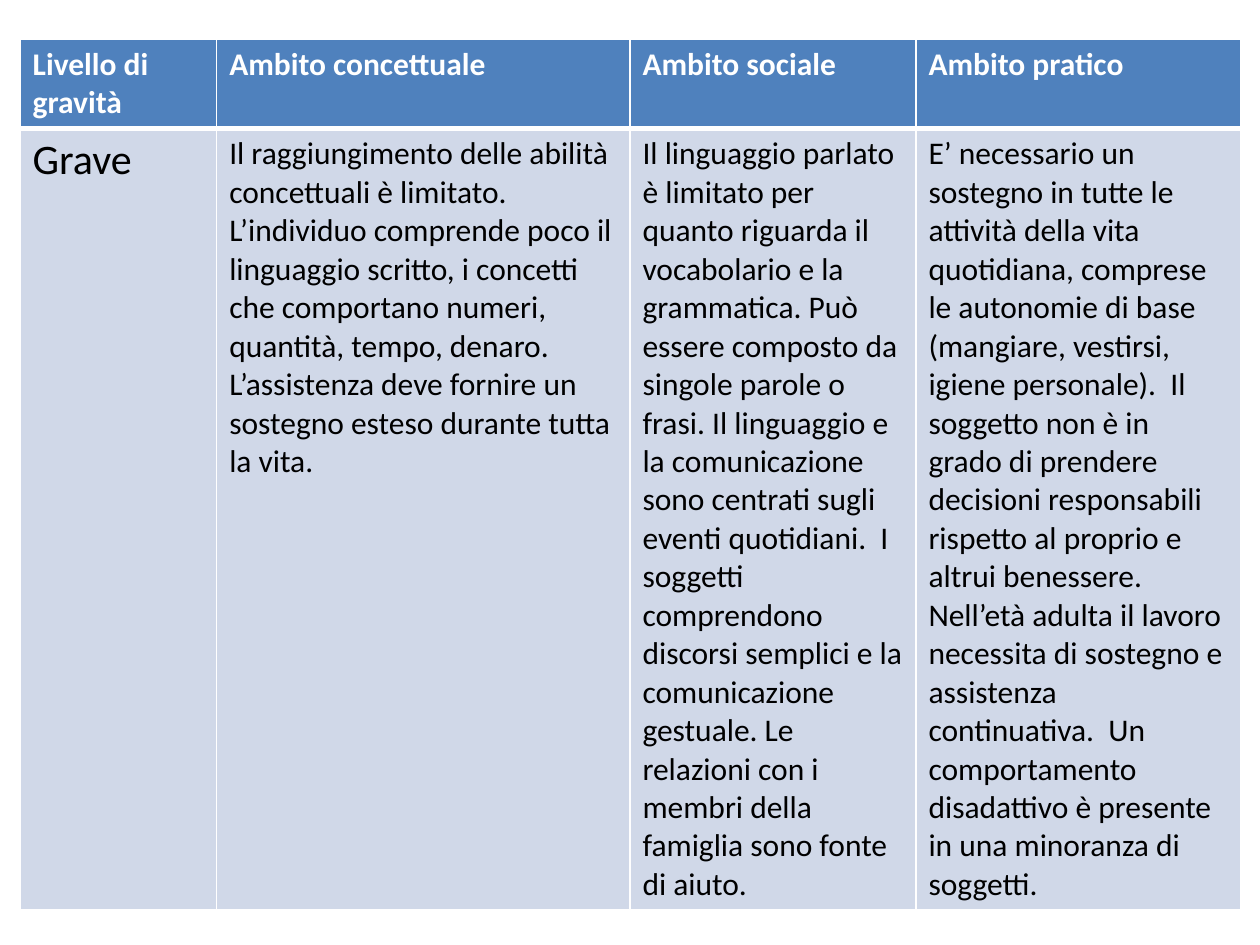
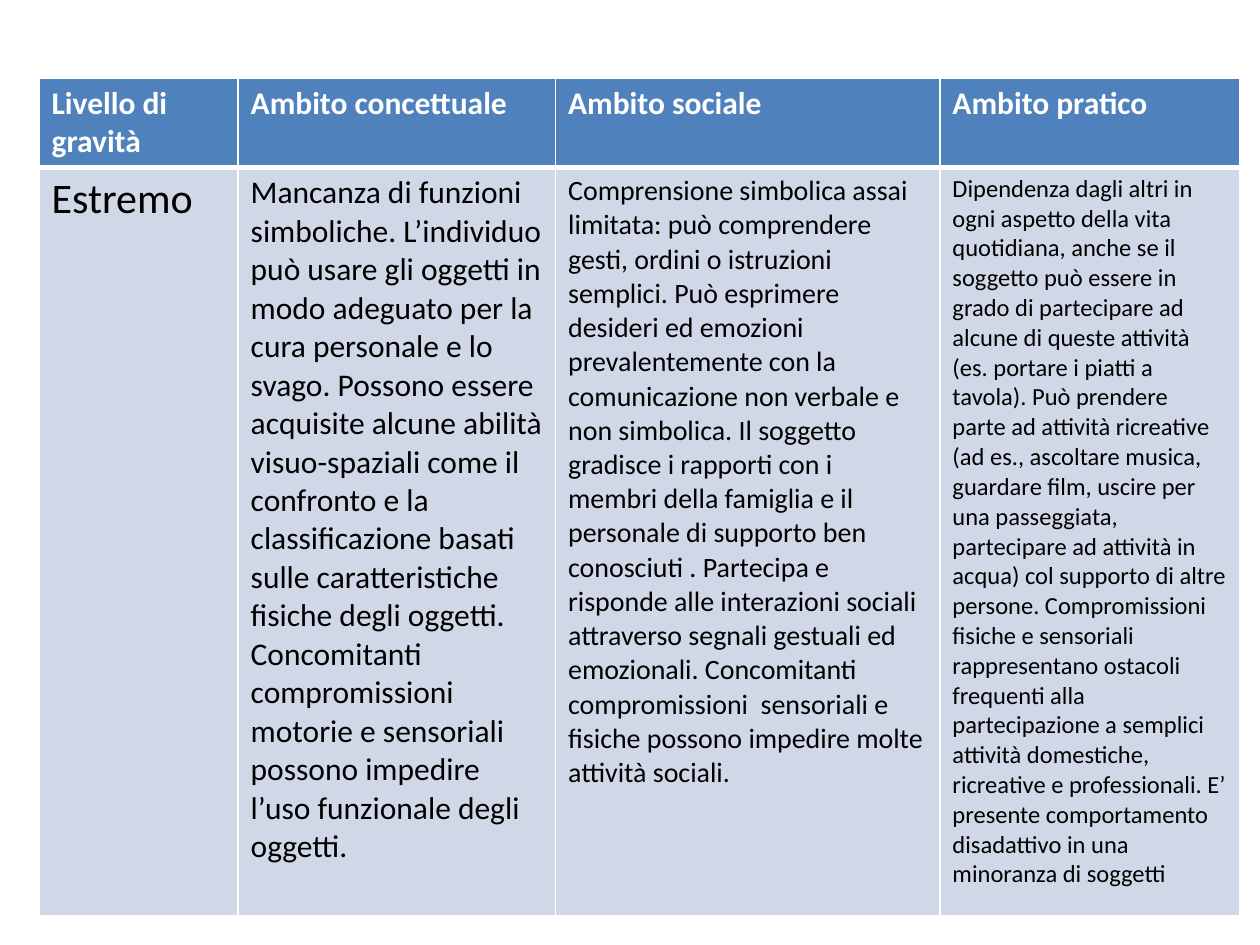
from dataclasses import dataclass

from lxml.etree import SubElement
from pptx import Presentation
from pptx.dml.color import RGBColor as Color
from pptx.oxml.ns import qn
from pptx.util import Inches, Pt


@dataclass(frozen=True)
class Theme:
    """Colours, font, type sizes and line widths shared by the slides."""
    font: str = "Calibri"
    white: str = "FFFFFF"
    black: str = "000000"
    header_fill: str = "4F81BD"
    body_fill: str = "D0D8E8"
    header_size: int = 18
    level_size: int = 24
    thin: int = 1
    thick: int = 3


THEME = Theme()
HEADINGS = ["Livello di gravità", "Ambito concettuale", "Ambito sociale", "Ambito pratico"]

SEVERE = [
    ("Grave", THEME.level_size),
    ("Il raggiungimento delle abilità concettuali è limitato. L’individuo comprende poco il "
     "linguaggio scritto, i concetti che comportano numeri, quantità, tempo, denaro. "
     "L’assistenza deve fornire un sostegno esteso durante tutta la vita.", 18),
    ("Il linguaggio parlato è limitato per quanto riguarda il vocabolario e la grammatica. "
     "Può essere composto da singole parole o frasi. Il linguaggio e la comunicazione sono "
     "centrati sugli eventi quotidiani.  I soggetti comprendono discorsi semplici e la "
     "comunicazione gestuale. Le relazioni con i membri della famiglia sono fonte di aiuto.", 18),
    ("E’ necessario un sostegno in tutte le attività della vita quotidiana, comprese le "
     "autonomie di base (mangiare, vestirsi, igiene personale).  Il soggetto non è in grado di "
     "prendere decisioni responsabili rispetto al proprio e altrui benessere. Nell’età adulta "
     "il lavoro necessita di sostegno e assistenza continuativa.  Un comportamento "
     "disadattivo è presente in una minoranza di soggetti.", 18),
]

EXTREME = [
    ("Estremo", THEME.level_size),
    ("Mancanza di funzioni simboliche. L’individuo può usare gli oggetti in modo adeguato per "
     "la cura personale e lo svago. Possono essere acquisite alcune abilità visuo-spaziali come "
     "il confronto e la classificazione basati sulle caratteristiche fisiche degli oggetti. "
     "Concomitanti compromissioni motorie e sensoriali possono impedire l’uso funzionale degli "
     "oggetti.", 18),
    ("Comprensione simbolica assai  limitata: può comprendere gesti, ordini o istruzioni "
     "semplici. Può esprimere  desideri ed emozioni prevalentemente con la comunicazione non "
     "verbale e non simbolica. Il soggetto gradisce i rapporti con i membri della famiglia e il "
     "personale di supporto ben conosciuti . Partecipa e risponde alle interazioni sociali "
     "attraverso segnali gestuali ed emozionali. Concomitanti compromissioni  sensoriali e "
     "fisiche possono impedire molte attività sociali.", 16),
    ("Dipendenza dagli altri in ogni aspetto della vita quotidiana, anche se il soggetto può "
     "essere in grado di partecipare ad alcune di queste attività (es. portare i piatti a "
     "tavola). Può prendere parte ad attività ricreative (ad es., ascoltare musica, guardare "
     "film, uscire per una passeggiata, partecipare ad attività in acqua) col supporto di altre "
     "persone. Compromissioni fisiche e sensoriali rappresentano ostacoli frequenti alla "
     "partecipazione a semplici attività domestiche, ricreative e professionali. E’ presente "
     "comportamento disadattivo in una minoranza di soggetti", 14),
]


def write_text(text_frame, text, size, color, bold=False):
    """Write one formatted run into a text frame."""
    run = text_frame.paragraphs[0].add_run()
    run.text = text
    run.font.name = THEME.font
    run.font.size = Pt(size)
    run.font.bold = bold
    run.font.color.rgb = Color.from_string(color)


def set_borders(cell, top, bottom):
    """Draw white borders, thin at the sides and as wide as asked above and below."""
    properties = cell._tc.get_or_add_tcPr()
    widths = {"L": THEME.thin, "R": THEME.thin, "T": top, "B": bottom}
    for side, width in widths.items():
        line = SubElement(properties, qn(f"a:ln{side}"), w=str(Pt(width)))
        fill = SubElement(line, qn("a:solidFill"))
        SubElement(fill, qn("a:srgbClr"), val=THEME.white)


def fill_cell(cell, text, fill, top, bottom, **text_format):
    """Give a cell its borders, fill and text."""
    set_borders(cell, top, bottom)
    cell.fill.solid()
    cell.fill.fore_color.rgb = Color.from_string(fill)
    write_text(cell.text_frame, text, **text_format)


def add_level_slide(presentation, box, column_widths, header_height, level):
    """Add a slide whose table describes one severity level inside the box."""
    left, top, width, height = box
    slide = presentation.slides.add_slide(presentation.slide_layouts[6])
    table = slide.shapes.add_table(2, len(HEADINGS), Inches(left), Inches(top),
                                   Inches(width), Inches(height)).table
    for column, column_width in zip(table.columns, column_widths):
        column.width = Inches(column_width)
    table.rows[0].height = Inches(header_height)
    table.rows[1].height = Inches(height - header_height)
    for index, (heading, (text, size)) in enumerate(zip(HEADINGS, level)):
        fill_cell(table.cell(0, index), heading, THEME.header_fill, THEME.thin, THEME.thick,
                  size=THEME.header_size, color=THEME.white, bold=True)
        fill_cell(table.cell(1, index), text, THEME.body_fill, THEME.thick, THEME.thin,
                  size=size, color=THEME.black)


def main():
    """Build the presentation and save it."""
    presentation = Presentation()
    presentation.slide_width = Inches(10)
    presentation.slide_height = Inches(7.5)
    add_level_slide(presentation, (0.16, 0.31, 9.69, 6.8), (1.56, 3.28, 2.27, 2.58), 0.7, SEVERE)
    add_level_slide(presentation, (0.31, 0.62, 9.53, 6.64), (1.58, 2.52, 3.05, 2.38), 0.7, EXTREME)
    presentation.save("out.pptx")


if __name__ == "__main__":
    main()
